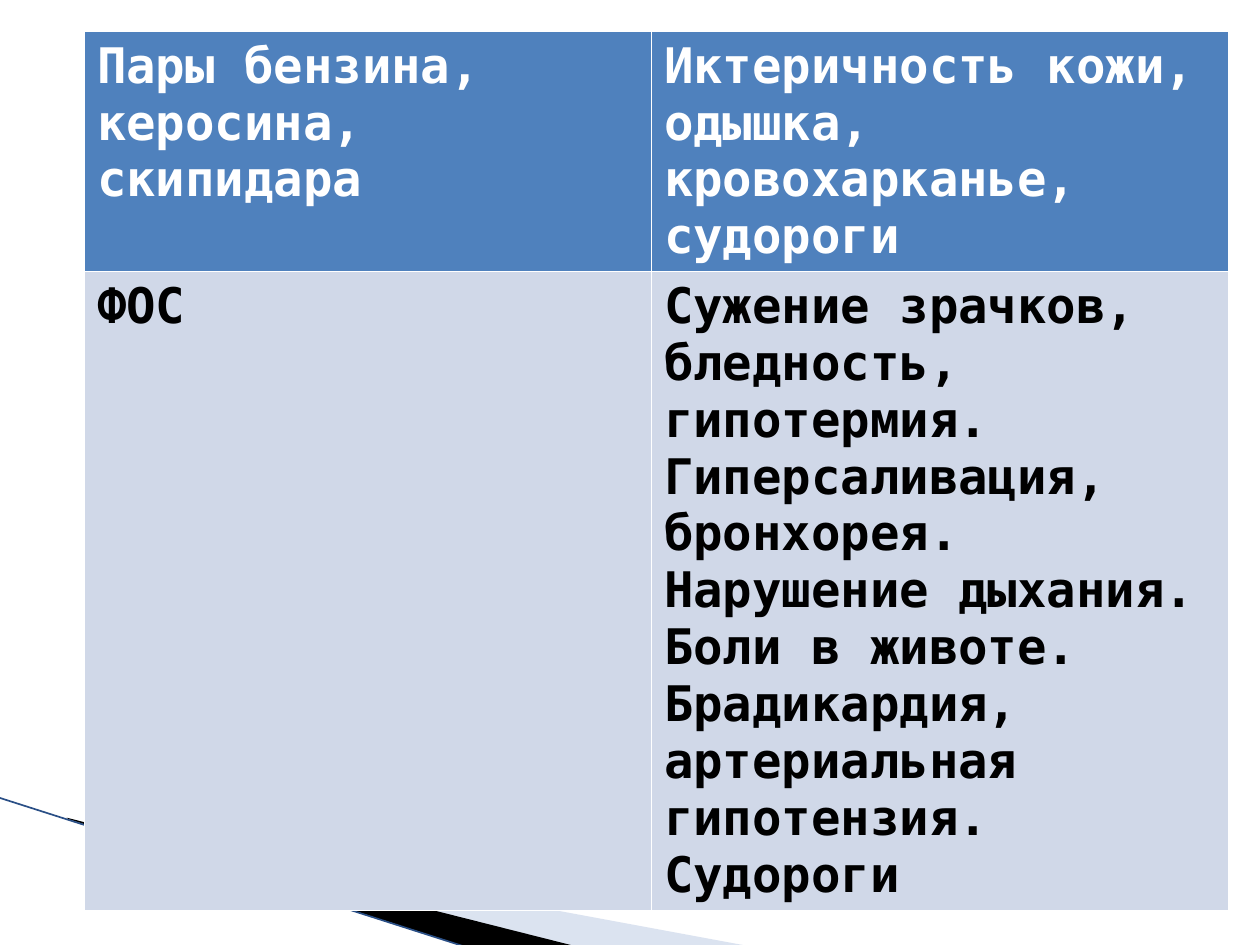
from dataclasses import dataclass

from lxml.etree import SubElement
from pptx import Presentation
from pptx.dml.color import RGBColor
from pptx.enum.shapes import MSO_CONNECTOR
from pptx.oxml.ns import qn
from pptx.util import Inches, Pt


@dataclass(frozen=True)
class Theme:
    font: str = "DejaVu Sans Mono"
    size: int = 28
    header_fill: str = "4F81BD"
    header_text: str = "FFFFFF"
    body_fill: str = "D0D8E8"
    body_text: str = "000000"
    pale_wedge: str = "A7B9DB"
    dark_wedge: str = "000000"
    edge: str = "2A4F86"


@dataclass(frozen=True)
class Wedge:
    box: tuple[float, float, float, float]
    points: tuple[tuple[float, float], ...]
    color: str
    opacity: int = 100


@dataclass(frozen=True)
class Row:
    height: float
    fill: str
    color: str
    texts: tuple[str, ...]


THEME = Theme()

WEDGES = (
    Wedge((0.78, 5.47, 4.16, 1.58),
          ((0.55, 6.51), (5.95, 7.51), (4.56, 7.51), (0.55, 6.5)), THEME.pale_wedge, 40),
    Wedge((-0.06, 6.33, 4.16, 0.92),
          ((0.53, 6.49), (4.57, 7.51), (3.72, 7.52), (0.54, 6.5)), THEME.dark_wedge),
)

COLUMNS = (4.5, 4.58)
ROWS = (
    Row(1.86, THEME.header_fill, THEME.header_text, (
        "Пары бензина, керосина,\nскипидара",
        "Иктеричность кожи, одышка, кровохарканье, судороги",
    )),
    Row(4.16, THEME.body_fill, THEME.body_text, (
        "ФОС",
        "Сужение зрачков, бледность, гипотермия. Гиперсаливация, бронхорея. "
        "Нарушение дыхания. Боли в животе. Брадикардия, артериальная гипотензия. Судороги",
    )),
)


def write_text(tf, text: str, *, color: str, size: int = THEME.size, bold: bool = True) -> None:
    tf.text = text
    for p in tf.paragraphs:
        for r in p.runs:
            r.font.name = THEME.font
            r.font.size = Pt(size)
            r.font.bold = bold
            r.font.color.rgb = RGBColor.from_string(color)


def set_frame(sp, box: tuple[float, float, float, float]) -> None:
    """Give a freeform its own frame while its outline stays in place."""
    left, top, width, height = (Inches(v) for v in box)
    dx, dy = sp.left - left, sp.top - top
    for outline in sp._element.iter(qn("a:path")):
        outline.set("w", str(width))
        outline.set("h", str(height))
        for pt in outline.iter(qn("a:pt")):
            pt.set("x", str(int(pt.get("x")) + dx))
            pt.set("y", str(int(pt.get("y")) + dy))
    sp.left, sp.top, sp.width, sp.height = left, top, width, height


def add_wedge(s, wedge: Wedge) -> None:
    points = [(Inches(x), Inches(y)) for x, y in wedge.points]
    builder = s.shapes.build_freeform(*points[0])
    builder.add_line_segments(points[1:], close=True)
    sp = builder.convert_to_shape()
    set_frame(sp, wedge.box)
    sp.shadow.inherit = False
    sp.line.fill.background()
    sp.fill.solid()
    sp.fill.fore_color.rgb = RGBColor.from_string(wedge.color)
    if wedge.opacity < 100:
        color = sp.fill._xPr.find(f"{qn('a:solidFill')}/{qn('a:srgbClr')}")
        SubElement(color, qn("a:alpha"), val=str(wedge.opacity * 1000))


def add_edge(s) -> None:
    line = s.shapes.add_connector(
        MSO_CONNECTOR.STRAIGHT, Inches(-0.01), Inches(6.33), Inches(3.71), Inches(7.52))
    line.line.color.rgb = RGBColor.from_string(THEME.edge)
    line.line.width = Pt(0.95)
    SubElement(line._element.spPr, qn("a:effectLst"))


def add_symptom_table(s) -> None:
    table = s.shapes.add_table(
        len(ROWS), len(COLUMNS), Inches(0.67), Inches(0.25),
        Inches(sum(COLUMNS)), Inches(sum(row.height for row in ROWS))).table
    for i, width in enumerate(COLUMNS):
        table.columns[i].width = Inches(width)
    for i, row in enumerate(ROWS):
        table.rows[i].height = Inches(row.height)
        for j, text in enumerate(row.texts):
            cell = table.cell(i, j)
            cell.fill.solid()
            cell.fill.fore_color.rgb = RGBColor.from_string(row.fill)
            write_text(cell.text_frame, text, color=row.color)


def main() -> None:
    prs = Presentation()
    prs.slide_width, prs.slide_height = Inches(10), Inches(7.5)
    s = prs.slides.add_slide(prs.slide_layouts[6])

    # Corner decoration
    for wedge in WEDGES:
        add_wedge(s, wedge)
    add_edge(s)

    # Poisons and their symptoms
    add_symptom_table(s)

    prs.save("out.pptx")


if __name__ == "__main__":
    main()
